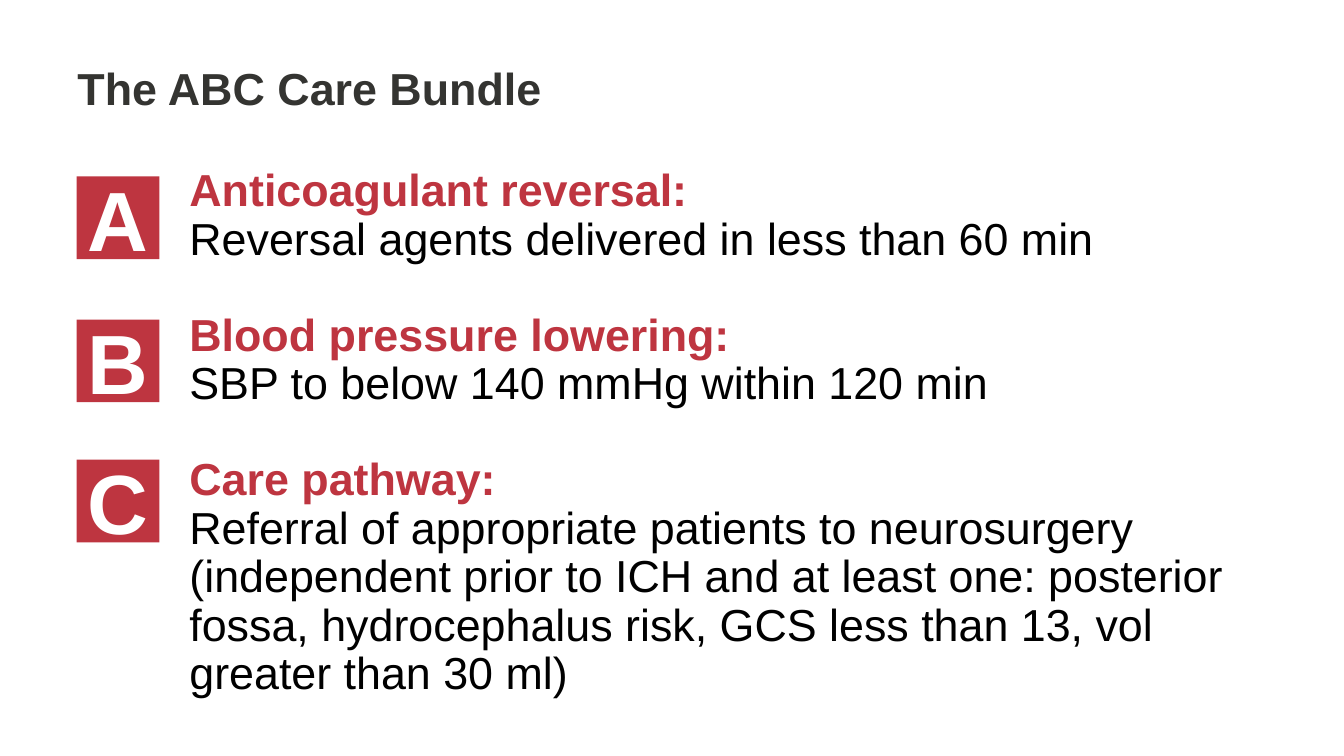
from pptx import Presentation
from pptx.dml.color import RGBColor
from pptx.enum.shapes import MSO_SHAPE as Shape
from pptx.enum.text import MSO_ANCHOR as Anchor, PP_ALIGN as Align
from pptx.util import Inches, Pt

COLORS = {"red": "BE3540", "title": "343431", "body": "000000", "white": "FFFFFF"}
FONT = "Arial"
BADGE_SIZE = 0.82
STEPS = [
    ("A", 1.75, "Anticoagulant reversal:",
     "Reversal agents delivered in less than 60 min"),
    ("B", 3.17, "Blood pressure lowering:",
     "SBP to below 140 mmHg within 120 min"),
    ("C", 4.56, "Care pathway:",
     "Referral of appropriate patients to neurosurgery (independent prior to ICH "
     "and at least one: posterior fossa, hydrocephalus risk, GCS less than 13, "
     "vol greater than 30 ml)"),
]


def style_run(run, color, size=32, bold=True):
    run.font.name = FONT
    run.font.size = Pt(size)
    run.font.bold = bold
    run.font.color.rgb = RGBColor.from_string(COLORS[color])


def add_text_frame(slide, left, top, width, height):
    box = slide.shapes.add_textbox(
        Inches(left), Inches(top), Inches(width), Inches(height))
    box.text_frame.word_wrap = True
    return box.text_frame


def add_title(slide, left, top, width, height):
    text_frame = add_text_frame(slide, left, top, width, height)
    text_frame.vertical_anchor = Anchor.MIDDLE
    text_frame.text = "The ABC Care Bundle"
    style_run(text_frame.paragraphs[0].runs[0], "title")


def add_steps(slide, left, top, width, height):
    text_frame = add_text_frame(slide, left, top, width, height)
    for index, (_, _, heading, detail) in enumerate(STEPS):
        paragraph = text_frame.add_paragraph() if index else text_frame.paragraphs[0]
        paragraph.text = f"{heading}\v{detail}"
        paragraph.line_spacing = 0.9
        paragraph.space_before = Pt(10 if index else 0)
        paragraph.space_after = Pt(24)
        heading_run, detail_run = paragraph.runs
        style_run(heading_run, "red")
        style_run(detail_run, "body", bold=False)


def add_badge(slide, left, top, size, letter):
    shape = slide.shapes.add_shape(
        Shape.RECTANGLE, Inches(left), Inches(top), Inches(size), Inches(size))
    shape.shadow.inherit = False
    shape.fill.solid()
    shape.fill.fore_color.rgb = RGBColor.from_string(COLORS["red"])
    shape.line.fill.background()
    text_frame = shape.text_frame
    text_frame.vertical_anchor = Anchor.MIDDLE
    text_frame.text = letter
    paragraph = text_frame.paragraphs[0]
    paragraph.alignment = Align.CENTER
    style_run(paragraph.runs[0], "white", size=60)


def main():
    presentation = Presentation()
    presentation.slide_width = Inches(13.33)
    presentation.slide_height = Inches(7.5)
    slide = presentation.slides.add_slide(presentation.slide_layouts[6])
    add_title(slide, 0.67, 0.22, 11.75, 1.3)
    add_steps(slide, 1.78, 1.62, 11.18, 5.88)
    for letter, top, _, _ in STEPS:
        add_badge(slide, 0.76, top, BADGE_SIZE, letter)
    presentation.save("out.pptx")


if __name__ == "__main__":
    main()
